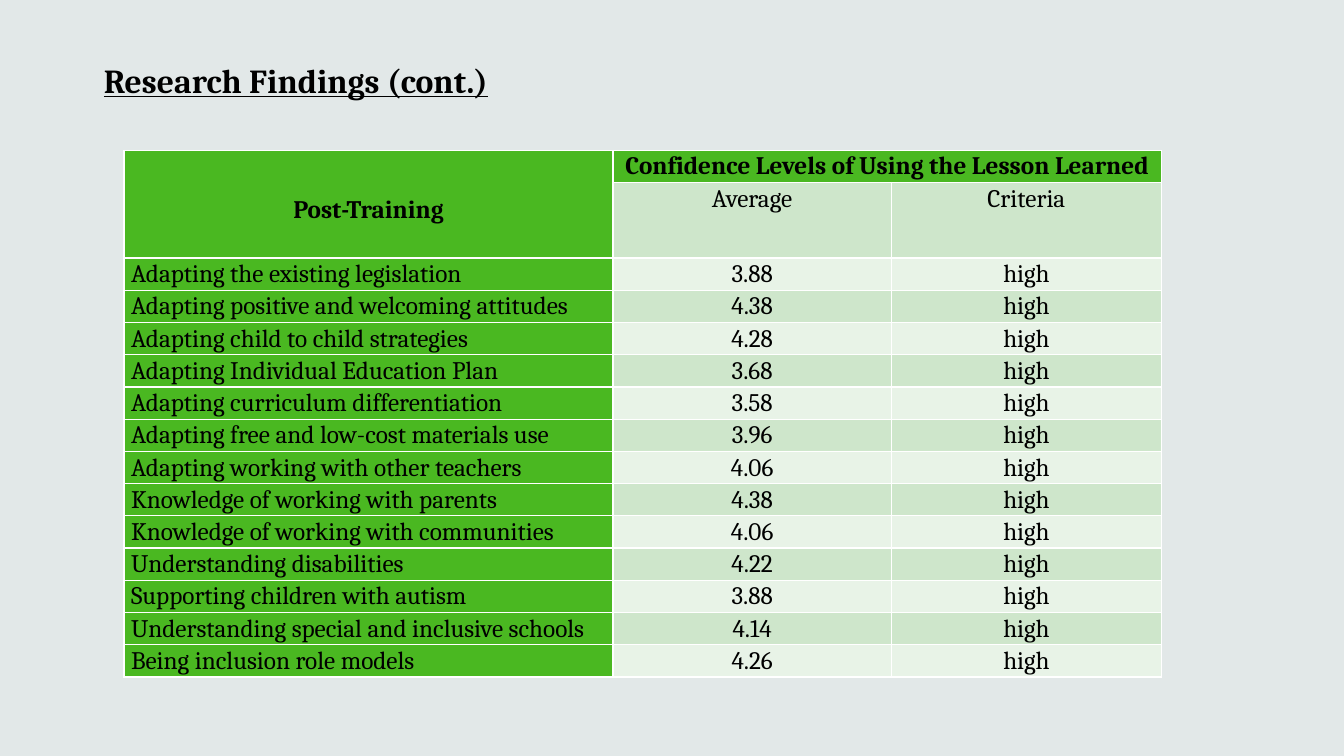
from pptx import Presentation
from pptx.dml.color import RGBColor
from pptx.enum.text import MSO_ANCHOR, MSO_AUTO_SIZE, PP_ALIGN
from pptx.util import Inches, Pt

HEADING = "Research Findings (cont.)"
ROW_HEADER = "Post-Training"
GROUP_HEADER = "Confidence Levels of Using the Lesson Learned"
SUBHEADERS = ("Average", "Criteria")
FINDINGS = [
    ("Adapting the existing legislation", "3.88", "high"),
    ("Adapting positive and welcoming attitudes", "4.38", "high"),
    ("Adapting child to child strategies", "4.28", "high"),
    ("Adapting Individual Education Plan", "3.68", "high"),
    ("Adapting curriculum differentiation", "3.58", "high"),
    ("Adapting free and low-cost materials use", "3.96", "high"),
    ("Adapting working with other teachers", "4.06", "high"),
    ("Knowledge of working with parents", "4.38", "high"),
    ("Knowledge of working with communities", "4.06", "high"),
    ("Understanding disabilities", "4.22", "high"),
    ("Supporting children with autism", "3.88", "high"),
    ("Understanding special and inclusive schools", "4.14", "high"),
    ("Being inclusion role models", "4.26", "high"),
]
COLUMN_WIDTHS = (4.85, 2.76, 2.68)
ROW_HEIGHT, SUBHEADER_HEIGHT = 0.32, 0.75
GREEN, BANDS = "4AB821", ("CEE6CB", "E8F3E7")
BACKGROUND, TEXT = "E2E8E8", "000000"
FONT = "Cambria"


def paint(fill, color):
    fill.solid()
    fill.fore_color.rgb = RGBColor.from_string(color)


def style_text(paragraph, size, bold, align):
    paragraph.alignment = align
    paragraph.font.name = FONT
    paragraph.font.size = Pt(size)
    paragraph.font.bold = bold
    paragraph.font.color.rgb = RGBColor.from_string(TEXT)


def fill_cell(cell, text, color, bold=False, align=PP_ALIGN.CENTER, top=0):
    cell.text = text
    cell.margin_left = cell.margin_right = Inches(0.07)
    cell.margin_top, cell.margin_bottom = Inches(top), 0
    paint(cell.fill, color)
    paragraph = cell.text_frame.paragraphs[0]
    paragraph.line_spacing = 1.07
    style_text(paragraph, 18, bold, align)


prs = Presentation()
prs.slide_width, prs.slide_height = Inches(13.33), Inches(7.5)
slide = prs.slides.add_slide(prs.slide_layouts[5])
paint(slide.background.fill, BACKGROUND)

heading = slide.shapes.title
heading.left, heading.top = Inches(0.93), Inches(0.54)
heading.width, heading.height = Inches(6.57), Inches(0.5)
heading.text_frame.text = HEADING
heading.text_frame.auto_size = MSO_AUTO_SIZE.NONE
heading.text_frame.vertical_anchor = MSO_ANCHOR.TOP
style_text(heading.text_frame.paragraphs[0], 24, True, PP_ALIGN.LEFT)
heading.text_frame.paragraphs[0].font.underline = True

row_heights = [ROW_HEIGHT, SUBHEADER_HEIGHT] + [ROW_HEIGHT] * len(FINDINGS)
table = slide.shapes.add_table(
    len(row_heights), len(COLUMN_WIDTHS), Inches(1.23), Inches(1.49),
    Inches(sum(COLUMN_WIDTHS)), Inches(sum(row_heights)),
).table
for column, width in zip(table.columns, COLUMN_WIDTHS):
    column.width = Inches(width)
for row, height in zip(table.rows, row_heights):
    row.height = Inches(height)

table.cell(0, 0).merge(table.cell(1, 0))
table.cell(0, 1).merge(table.cell(0, 2))
fill_cell(table.cell(0, 0), ROW_HEADER, GREEN, bold=True, top=0.43)
fill_cell(table.cell(0, 1), GROUP_HEADER, GREEN, bold=True)
for column, subheader in enumerate(SUBHEADERS, 1):
    fill_cell(table.cell(1, column), subheader, BANDS[0])

for row, (topic, *scores) in enumerate(FINDINGS, 2):
    fill_cell(table.cell(row, 0), topic, GREEN, align=PP_ALIGN.LEFT)
    for column, score in enumerate(scores, 1):
        fill_cell(table.cell(row, column), score, BANDS[(row - 1) % 2])

prs.save("out.pptx")
